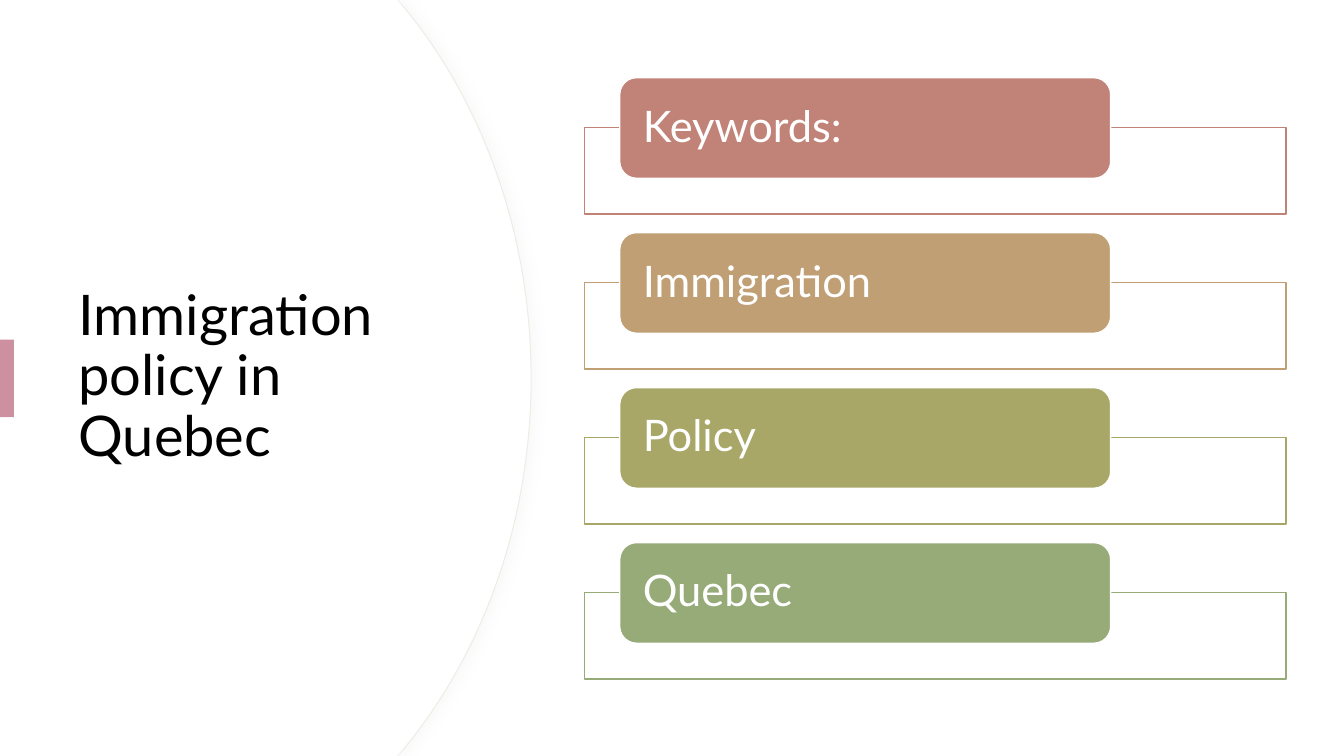
from lxml import etree
from pptx import Presentation
from pptx.dml.color import RGBColor
from pptx.enum import shapes, text
from pptx.oxml import ns
from pptx.util import Pt

WHITE = RGBColor(0xFF, 0xFF, 0xFF)
BLACK = RGBColor(0x00, 0x00, 0x00)
CREAM = RGBColor(0xF0, 0xEB, 0xE4)
PINK = RGBColor(0xCC, 0x90, 0xA0)
ROSE = RGBColor(0xC1, 0x83, 0x77)
TAN = RGBColor(0xC0, 0x9F, 0x74)
OLIVE = RGBColor(0xA8, 0xA7, 0x68)
SAGE = RGBColor(0x96, 0xAB, 0x78)

WIDTH, HEIGHT = 960, 540
STEP = 110.7
KIND = shapes.MSO_SHAPE
KEYS = [("Keywords:", ROSE), ("Immigration", TAN), ("Policy", OLIVE), ("Quebec", SAGE)]
TITLE = {"margin_left": Pt(7.2), "margin_right": Pt(7.2)}
LABEL = {"margin_left": Pt(13), "margin_right": Pt(13), "margin_top": 0, "margin_bottom": 0}


def paint(shape, fill, line=None, width=1):
    shape.shadow.inherit = False
    shape.fill.solid()
    shape.fill.fore_color.rgb = fill
    if line is None:
        shape.line.fill.background()
    else:
        shape.line.color.rgb = line
        shape.line.width = Pt(width)


def block(slide, kind, box, fill, line=None):
    shape = slide.shapes.add_shape(kind, *map(Pt, box))
    paint(shape, fill, line)
    return shape


def write(shape, words, size, color, form):
    frame = shape.text_frame
    frame.text = words
    look = {"word_wrap": True, "vertical_anchor": text.MSO_ANCHOR.MIDDLE, **form}
    for name, value in look.items():
        setattr(frame, name, value)
    para = frame.paragraphs[0]
    for name, value in {"alignment": text.PP_ALIGN.LEFT, "line_spacing": 0.9}.items():
        setattr(para, name, value)
    font = para.runs[0].font
    for name, value in {"name": "Lato", "size": Pt(size)}.items():
        setattr(font, name, value)
    font.color.rgb = color


def bend(shape, start):
    lines = list(shape.element.iter(ns.qn("a:lnTo")))[start:start + 3]
    curve = etree.Element(ns.qn("a:cubicBezTo"))
    lines[0].addprevious(curve)
    for line in lines:
        curve.append(line[0])
        line.getparent().remove(line)


def panel(slide, edge, line=None):
    upper = [(283.7, 0), (edge - 90.7, 5.4), (edge - 34.7, 73.4), (edge, 167), (edge, HEIGHT / 2)]
    lower = [(x, HEIGHT - y) for x, y in reversed(upper[:-1])]
    points = [(Pt(x), Pt(y)) for x, y in upper + lower + [(0, HEIGHT)]]
    form = slide.shapes.build_freeform(0, 0)
    form.add_line_segments(points, close=True)
    shape = form.convert_to_shape()
    for start in (5, 2):
        bend(shape, start)
    paint(shape, WHITE, line, 0.75)
    return shape


def shade(shape):
    effect = shape.element.spPr.find(ns.qn("a:effectLst"))
    outer = etree.SubElement(effect, ns.qn("a:outerShdw"), blurRad=str(Pt(8)), dist=str(Pt(3)), dir="0")
    color = etree.SubElement(outer, ns.qn("a:srgbClr"), val="D9D9D9")
    etree.SubElement(color, ns.qn("a:alpha"), val="15000")


def card(slide, row, words, color):
    top = row * STEP
    block(slide, KIND.RECTANGLE, (417.6, 91.2 + top, 501, 61.6), WHITE, color)
    tab = block(slide, KIND.ROUNDED_RECTANGLE, (442.7, 55.5 + top, 350.7, 71.9), color, WHITE)
    write(tab, words, 31, WHITE, LABEL)


def main():
    deck = Presentation()
    deck.slide_width, deck.slide_height = Pt(WIDTH), Pt(HEIGHT)
    slide = deck.slides.add_slide(deck.slide_layouts[6])
    block(slide, KIND.RECTANGLE, (0, 0, WIDTH, HEIGHT), WHITE)
    shade(panel(slide, 379.4, CREAM))
    panel(slide, 378.7)
    title = slide.shapes.add_textbox(Pt(49), Pt(91.4), Pt(283.7), Pt(356.4))
    write(title, "Immigration policy in Quebec", 40, BLACK, TITLE)
    block(slide, KIND.RECTANGLE, (0, 242.6, 10, 55.4), PINK)
    for row, (words, color) in enumerate(KEYS):
        card(slide, row, words, color)
    deck.save("out.pptx")


if __name__ == "__main__":
    main()
